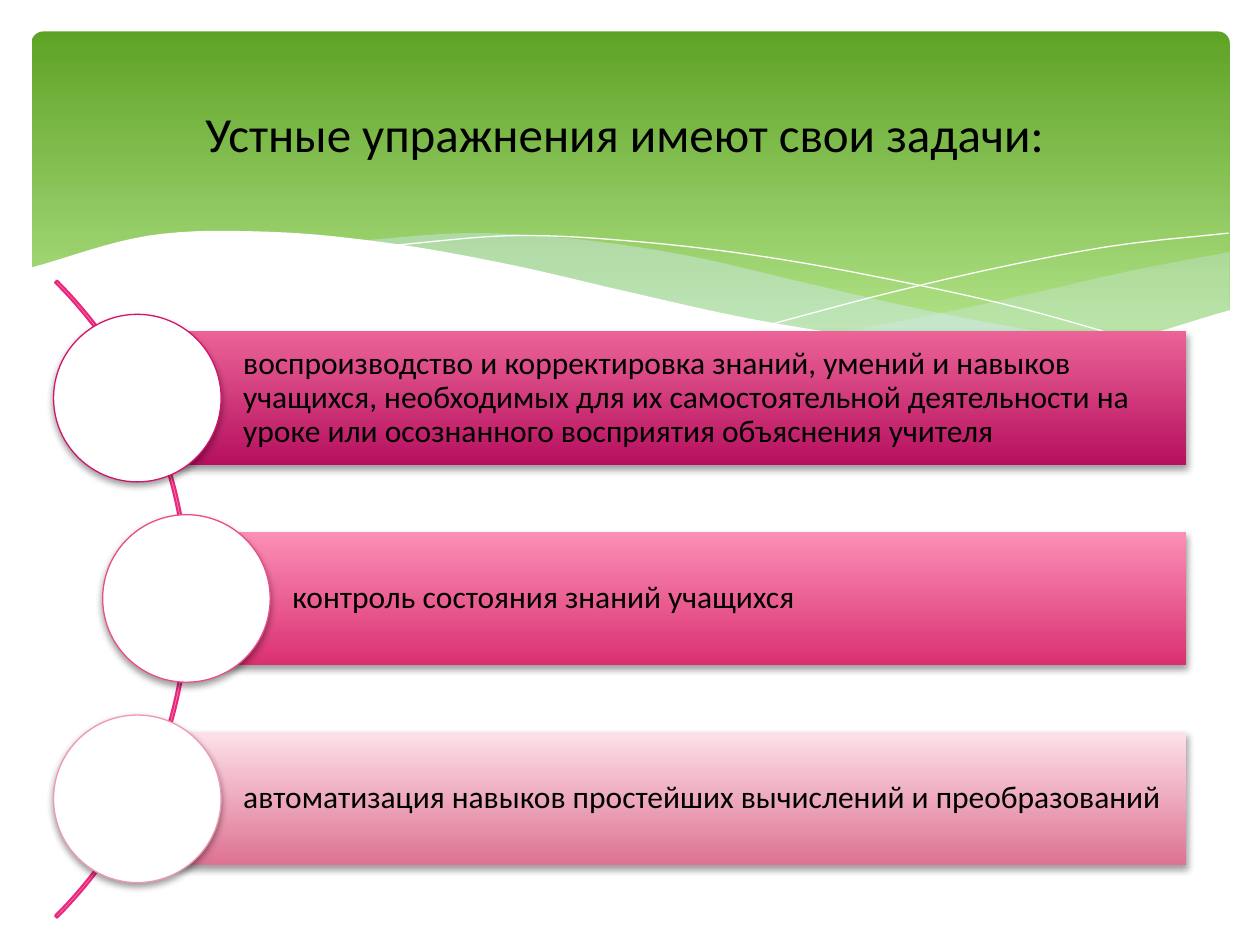
from lxml import etree
from pptx import Presentation
from pptx.dml.color import RGBColor
from pptx.enum.shapes import MSO_SHAPE
from pptx.enum.text import MSO_ANCHOR, PP_ALIGN
from pptx.oxml.ns import qn
from pptx.util import Inches, Pt

TITLE = "Устные упражнения имеют свои задачи: "

# Tasks: text, bar left, gradient top, gradient bottom, circle outline
TASKS = [
    ("воспроизводство и корректировка знаний, умений и навыков учащихся, "
     "необходимых для их самостоятельной деятельности на уроке или "
     "осознанного восприятия объяснения учителя",
     1.09, "EB6397", "B6105F", "D4136F"),
    ("контроль состояния знаний учащихся",
     1.48, "FB90B6", "DA3071", "EA4D89"),
    ("автоматизация навыков простейших вычислений и преобразований",
     1.09, "FDE1E9", "DD7291", "F098B2"),
]
BAR_TOP, BAR_STEP, BAR_H, BAR_END = 2.63, 1.59, 1.06, 9.415
DOT = 1.33

# Header waves: left, right, heights at equal steps along the top edge,
# the same along the bottom edge (none for a thin line), opacity, fill
WAVES = [
    (6.61, 9.76, [2.65, 2.5, 2.33, 2.15, 2],
     [2.65, 2.74, 2.78, 2.7, 2.47], 29, "D6ECFF"),
    (2.86, 8.93, [1.91, 1.85, 1.9, 2.03, 2.23, 2.43, 2.6, 2.73],
     [1.91, 2.05, 2.24, 2.43, 2.61, 2.73, 2.78, 2.73], 40, "D6ECFF"),
    (3.09, 9.07, [1.95, 1.87, 1.92, 2.04, 2.22, 2.44, 2.72], [], 100, None),
    (6.13, 9.75, [2.57, 2.33, 2.12, 1.95, 1.85], [], 100, None),
    (0.23, 9.77, [2.13, 1.87, 1.84, 1.93, 2.1, 2.32, 2.53, 2.68, 2.76, 2.72, 2.46],
     [3.29, 3.29], 100, "FFFFFF"),
]
PARTS = 8


def rgb(code):
    return RGBColor.from_string(code)


def paint(shape, fill=None, line=None, width=0):
    shape.shadow.inherit = False
    if fill:
        shape.fill.solid()
        shape.fill.fore_color.rgb = rgb(fill)
    else:
        shape.fill.background()
    if line:
        shape.line.color.rgb = rgb(line)
        shape.line.width = Pt(width)
    else:
        shape.line.fill.background()


def fade(shape, top, end, stop=1):
    shape.fill.gradient()
    shape.fill.gradient_angle = 270
    for mark, code, pos in zip(shape.fill.gradient_stops, (top, end), (0, stop)):
        mark.color.rgb = rgb(code)
        mark.position = pos


def alpha(color, cent):
    etree.SubElement(color, qn("a:alpha"), val=str(cent * 1000))


def shade(shape):
    effects = shape.element.spPr.find(qn("a:effectLst"))
    outer = etree.SubElement(effects, qn("a:outerShdw"), blurRad=str(Pt(4)),
                             dist=str(Pt(2)), dir="5400000", rotWithShape="0")
    alpha(etree.SubElement(outer, qn("a:srgbClr"), val="000000"), 38)


def curve(left, right, marks):
    """Smooth points through heights at equal steps (Catmull-Rom)."""
    if not marks:
        return []
    count = len(marks) - 1
    # Extend both ends in a straight line
    ys = [2 * marks[0] - marks[1], *marks, 2 * marks[-1] - marks[-2]]
    points = []
    for n in range(count * PARTS + 1):
        i = min(n // PARTS, count - 1)
        t = n / PARTS - i
        a, b, c, d = ys[i:i + 4]
        y = b + t / 2 * (c - a + t * (2 * a - 5 * b + 4 * c - d
                                      + t * (3 * (b - c) + d - a)))
        x = left + (right - left) * n / (count * PARTS)
        points.append((Inches(x), Inches(y)))
    return points


def add(kind, x, y, w, h):
    return slide.shapes.add_shape(kind, Inches(x), Inches(y), Inches(w), Inches(h))


def write(shape, text, size, align):
    frame = shape.text_frame
    frame.word_wrap = True
    frame.vertical_anchor = MSO_ANCHOR.MIDDLE
    para = frame.paragraphs[0]
    para.alignment = align
    run = para.add_run()
    run.text = text
    run.font.size = Pt(size)
    run.font.name = "Calibri"
    run.font.color.rgb = rgb("000000")
    return frame


deck = Presentation()
deck.slide_width, deck.slide_height = Inches(10), Inches(7.5)
slide = deck.slides.add_slide(deck.slide_layouts[6])

# Green header
head = add(MSO_SHAPE.ROUNDED_RECTANGLE, 0.25, 0.25, 9.51, 2.7)
head.adjustments[0] = 0.034
paint(head)
fade(head, "5FA326", "B2E389", 0.9)

# Waves
for left, right, upper, lower, cent, fill in WAVES:
    points = curve(left, right, upper) + curve(left, right, lower)[::-1]
    pen = slide.shapes.build_freeform(*points[0])
    pen.add_line_segments(points[1:], close=bool(fill))
    wave = pen.convert_to_shape()
    paint(wave, fill, None if fill else "FFFFFF")
    if cent < 100:
        alpha(wave.element.spPr.find(".//" + qn("a:srgbClr")), cent)

# Title
box = slide.shapes.add_textbox(Inches(0.5), Inches(0.37), Inches(9), Inches(1.37))
write(box, TITLE, 28, PP_ALIGN.CENTER)

# Arc behind the tasks
arc = add(MSO_SHAPE.BLOCK_ARC, -5.65, 1.18, 7.15, 7.15)
for i, value in enumerate((189, 27, 0.003)):
    arc.adjustments[i] = value
paint(arc, None, "EA277C", 1.25)

# Task bars, each with a circle centred on its left edge
for i, (text, left, top, end, edge) in enumerate(TASKS):
    y = BAR_TOP + i * BAR_STEP
    bar = add(MSO_SHAPE.RECTANGLE, left, y, BAR_END - left, BAR_H)
    paint(bar)
    fade(bar, top, end)
    shade(bar)
    frame = write(bar, text, 18, PP_ALIGN.LEFT)
    frame.margin_left = Inches(0.84)
    frame.margin_top = frame.margin_right = frame.margin_bottom = Inches(0.05)
    frame.paragraphs[0].line_spacing = 0.9

    dot = add(MSO_SHAPE.OVAL, left - DOT / 2, y + (BAR_H - DOT) / 2, DOT, DOT)
    paint(dot, "FFFFFF", edge, 0.75)
    shade(dot)

deck.save("out.pptx")
